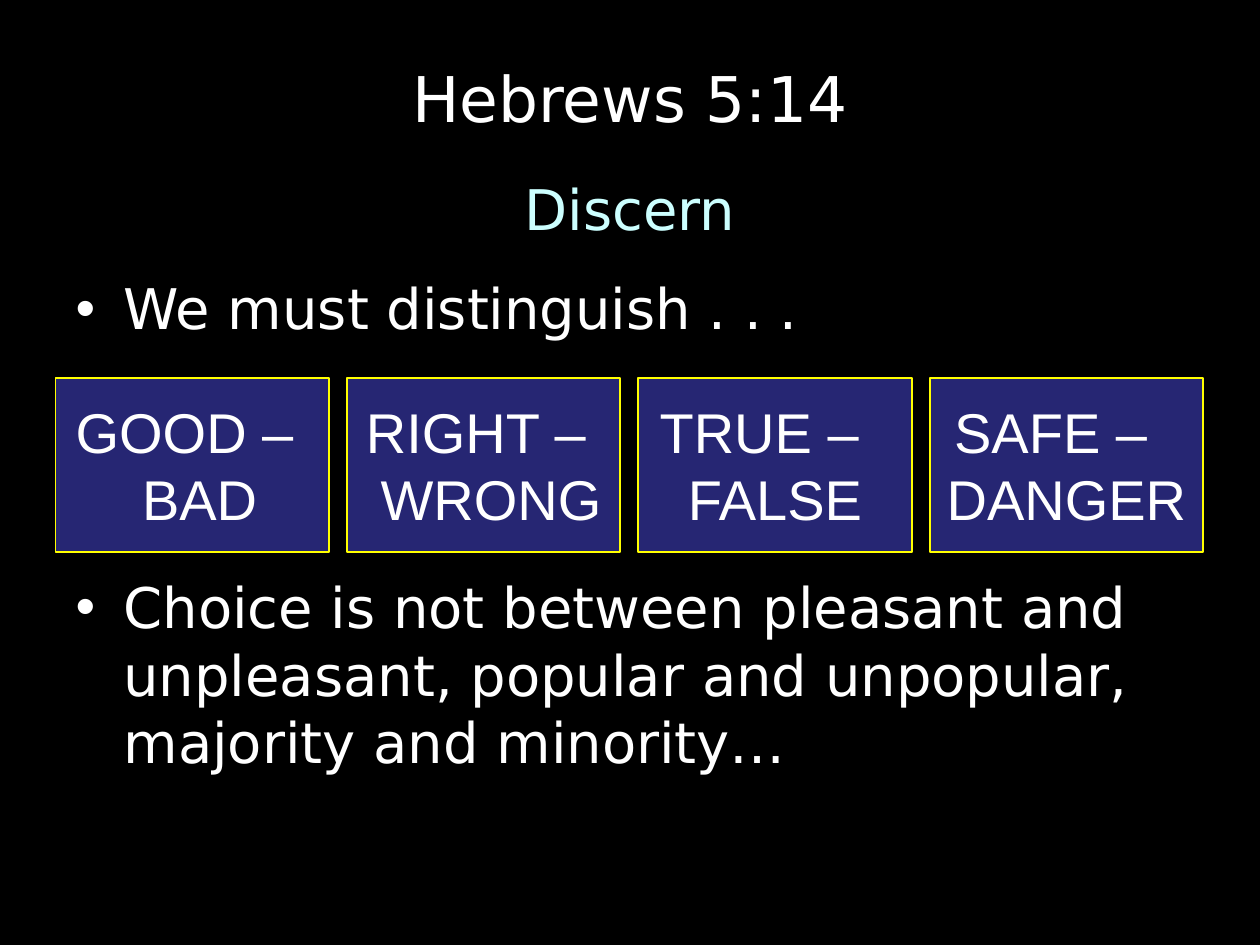
from pptx import Presentation
from pptx.dml.color import RGBColor
from pptx.enum.shapes import MSO_SHAPE
from pptx.enum.text import MSO_ANCHOR, MSO_AUTO_SIZE, PP_ALIGN
from pptx.util import Inches, Pt
from lxml.etree import SubElement
from pptx.oxml.ns import qn

BLACK, WHITE, CYAN, NAVY, YELLOW = "000000", "FFFFFF", "CCFFFF", "262673", "FFFF00"
HEADING_FONT, BOX_FONT = "DejaVu Sans", "Arial"

# First word, its right indent, second word, its left indent
PAIRS = [
    ("GOOD –", 0.12, "BAD", 0.12),
    ("RIGHT –", 0.12, "WRONG", 0.12),
    ("TRUE –", 0.25, "FALSE", 0),
    ("SAFE –", 0.25, "DANGER", 0),
]


def paint(fill, color):
    fill.solid()
    fill.fore_color.rgb = RGBColor.from_string(color)


def write(paragraph, text, font, size, color, **formats):
    run = paragraph.add_run()
    run.text = text
    run.font.name, run.font.size = font, Pt(size)
    run.font.color.rgb = RGBColor.from_string(color)
    for name, value in formats.items():
        setattr(paragraph, name, value)


def indent(paragraph, left=0, right=0, first=0):
    properties = paragraph._p.get_or_add_pPr()
    for name, value in {"marL": left, "marR": right, "indent": first}.items():
        properties.set(name, str(Inches(value)))


def set_bullet(paragraph, character=None):
    properties = paragraph._p.get_or_add_pPr()
    if character:
        SubElement(properties, qn("a:buChar")).set("char", character)
    else:
        SubElement(properties, qn("a:buNone"))


def place(shape, left, top, width, height):
    box = {"left": left, "top": top, "width": width, "height": height}
    for name, value in box.items():
        setattr(shape, name, Inches(value))


def add_title(slide, *box):
    title = slide.shapes.title
    place(title, *box)
    title.text_frame.vertical_anchor = MSO_ANCHOR.MIDDLE
    write(title.text_frame.paragraphs[0], "Hebrews 5:14", HEADING_FONT, 36, WHITE,
          alignment=PP_ALIGN.CENTER)


def add_body(slide, *box):
    body = slide.placeholders[1]
    place(body, *box)
    frame = body.text_frame
    frame.auto_size = MSO_AUTO_SIZE.NONE
    spacing = {"space_before": Pt(6.4), "space_after": Pt(12), "line_spacing": Pt(38.6)}

    subtitle = frame.paragraphs[0]
    write(subtitle, "Discern", HEADING_FONT, 32, CYAN,
          alignment=PP_ALIGN.CENTER, **spacing)
    indent(subtitle)
    set_bullet(subtitle)

    bullets = [
        ("We must distinguish . . .", 6.4),
        ("Choice is not between pleasant and unpleasant, popular and unpopular, "
         "majority and minority…", 120),  # leaves room for the row of pairs
    ]
    for text, space_before in bullets:
        paragraph = frame.add_paragraph()
        write(paragraph, text, HEADING_FONT, 32, WHITE,
              **{**spacing, "space_before": Pt(space_before)})
        indent(paragraph, left=0.38, first=-0.38)
        set_bullet(paragraph, "•")


def add_pair(slide, pair, *box):
    first, right, second, left = pair
    shape = slide.shapes.add_shape(MSO_SHAPE.RECTANGLE, *map(Inches, box))
    shape.shadow.inherit = False
    paint(shape.fill, NAVY)
    paint(shape.line.fill, YELLOW)
    shape.line.width = Pt(1)
    frame = shape.text_frame
    frame.word_wrap = True
    frame.vertical_anchor = MSO_ANCHOR.MIDDLE
    lines = [(frame.paragraphs[0], first, 0, right),
             (frame.add_paragraph(), second, left, 0)]
    for paragraph, text, left_indent, right_indent in lines:
        write(paragraph, text, BOX_FONT, 32, WHITE, alignment=PP_ALIGN.CENTER)
        indent(paragraph, left_indent, right_indent)


def add_pair_row(slide, left, top, width, height, box_width=2.17):
    step = (width - box_width) / (len(PAIRS) - 1)
    for index, pair in enumerate(PAIRS):
        add_pair(slide, pair, left + index * step, top, box_width, height)


def main():
    presentation = Presentation()
    presentation.slide_width, presentation.slide_height = Inches(10), Inches(7.5)
    slide = presentation.slides.add_slide(presentation.slide_layouts[1])
    paint(slide.background.fill, BLACK)
    add_title(slide, 0.5, 0.08, 9, 1.38)
    add_body(slide, 0.5, 1.33, 9, 5.37)
    add_pair_row(slide, 0.44, 3, 9.11, 1.38)
    presentation.save("out.pptx")


if __name__ == "__main__":
    main()
